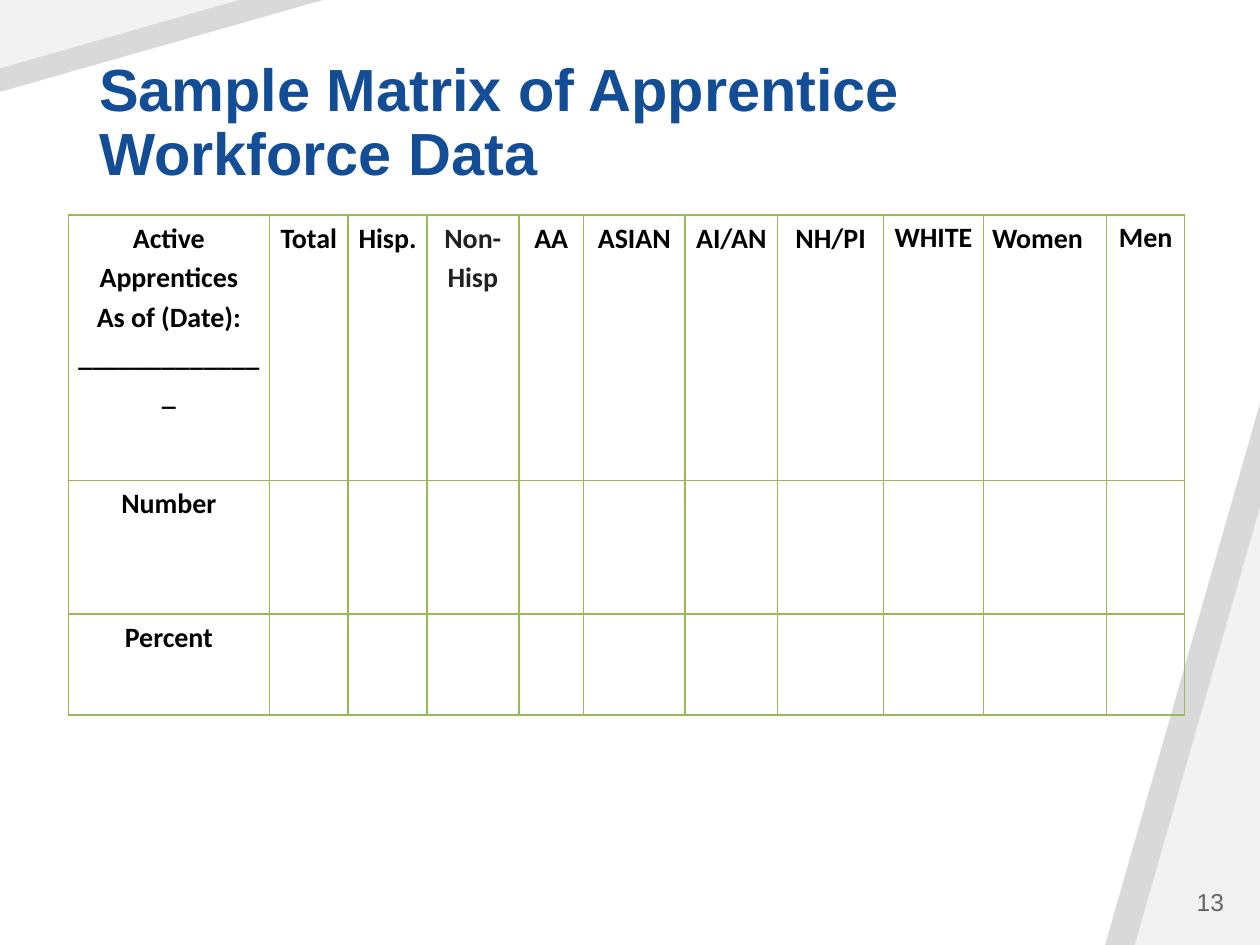
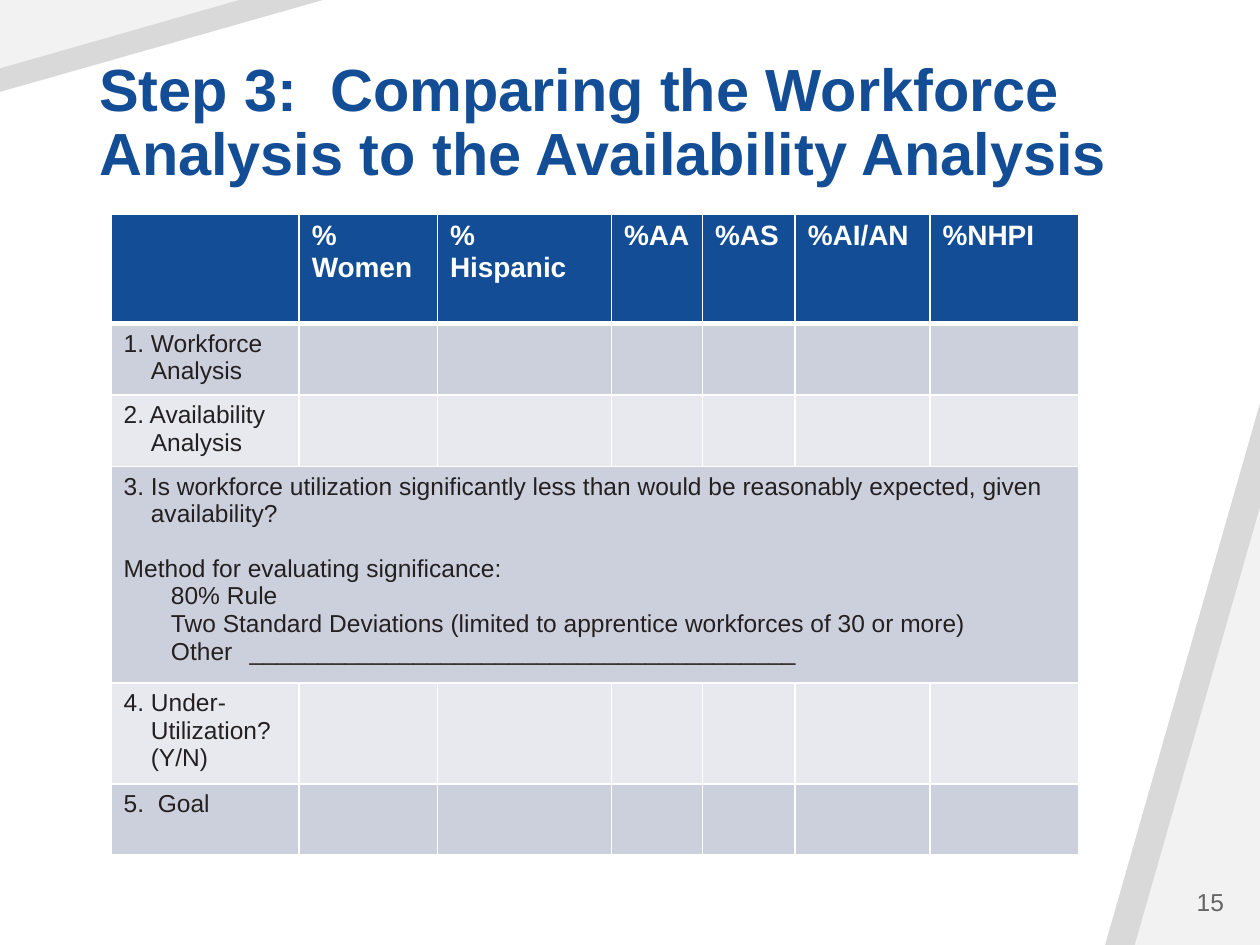
from lxml.etree import SubElement
from pptx import Presentation
from pptx.dml.color import RGBColor
from pptx.enum.shapes import MSO_SHAPE as SHAPE
from pptx.enum.text import MSO_ANCHOR as ANCHOR, MSO_AUTO_SIZE as FIT, PP_ALIGN as ALIGN
from pptx.oxml import parse_xml
from pptx.oxml.ns import nsdecls, qn
from pptx.util import Pt

COLORS = {
    "blue": "124D95", "ink": "242021", "black": "000000", "white": "FFFFFF",
    "gray": "646464", "band": "D9D9D9", "corner": "F2F2F2",
    "green": "98B954", "row_dark": "CCD0DD", "row_light": "E7E9EF",
}
# left, top, width, height, rotation, colour of each right-angled corner band
BANDS = [
    (631.5, 230.5, 88.5, 309.5, 0, "band"),
    (648.5, 290, 71.5, 250, 0, "corner"),
    (0, 0, 184.5, 52.5, 180, "band"),
    (0, 0, 136.5, 39, 180, "corner"),
]


def rgb(name):
    return RGBColor.from_string(COLORS[name])


class Deck:
    def __init__(self):
        self.prs = Presentation()
        self.prs.slide_width, self.prs.slide_height = Pt(720), Pt(540)
        self.s = None

    def slide(self, title, number):
        self.s = self.prs.slides.add_slide(self.prs.slide_layouts[5])
        for band in BANDS:
            self.band(*band)
        self.title(title)
        self.page_number(number)

    def style(self, p, size, color, font="Arial", bold=False):
        for r in p.runs:
            f = r.font
            f.name, f.size, f.bold = font, Pt(size), bold
            f.color.rgb = rgb(color)

    def band(self, x, y, w, h, rotation, color):
        sp = self.s.shapes.add_shape(SHAPE.ISOSCELES_TRIANGLE, Pt(x), Pt(y), Pt(w), Pt(h))
        sp.adjustments[0] = 1
        sp.rotation = rotation
        sp.shadow.inherit = False
        sp.fill.solid()
        sp.fill.fore_color.rgb = rgb(color)
        sp.line.fill.background()

    def title(self, text):
        sp = self.s.shapes.title
        sp.left, sp.top, sp.width, sp.height = Pt(49.5), Pt(29), Pt(626.5), Pt(82.5)
        tf = sp.text_frame
        tf.text = text
        tf.word_wrap, tf.auto_size = True, FIT.NONE
        tf.vertical_anchor = ANCHOR.BOTTOM
        p = tf.paragraphs[0]
        p.alignment, p.line_spacing = ALIGN.LEFT, 0.9
        self.style(p, 34, "blue", bold=True)
        # the title stays in front of the bands
        self.s.shapes._spTree.append(sp._element)

    def page_number(self, number):
        sp = self.s.shapes.add_textbox(Pt(605.5), Pt(500.5), Pt(101), Pt(29))
        tf = sp.text_frame
        tf.text = str(number)
        tf.word_wrap, tf.vertical_anchor = True, ANCHOR.MIDDLE
        p = tf.paragraphs[0]
        p.alignment = ALIGN.RIGHT
        self.style(p, 14, "gray")

    def table(self, x, y, widths, heights):
        frame = self.s.shapes.add_table(len(heights), len(widths), Pt(x), Pt(y),
                                        Pt(sum(widths)), Pt(sum(heights)))
        table = frame.table
        table.first_row = table.horz_banding = False
        for column, width in zip(table.columns, widths):
            column.width = Pt(width)
        for row, height in zip(table.rows, heights):
            row.height = Pt(height)
        return table

    def fill(self, cell, color=None):
        if color:
            cell.fill.solid()
            cell.fill.fore_color.rgb = rgb(color)
        else:
            cell.fill.background()

    def borders(self, cell, color, top=1, bottom=1):
        tcPr = cell._tc.get_or_add_tcPr()
        sides = {"lnL": 1, "lnR": 1, "lnT": top, "lnB": bottom}
        for i, (side, width) in enumerate(sides.items()):
            tcPr.insert(i, parse_xml(
                f'<a:{side} {nsdecls("a")} w="{Pt(width)}"><a:solidFill>'
                f'<a:srgbClr val="{COLORS[color]}"/></a:solidFill></a:{side}>'))

    def margins(self, cell, side, top):
        cell.margin_left = cell.margin_right = Pt(side)
        cell.margin_top, cell.margin_bottom = Pt(top), 0

    def indent(self, p, left, first, tab=None):
        pPr = p._p.get_or_add_pPr()
        pPr.set("marL", str(Pt(left)))
        pPr.set("indent", str(Pt(first)))
        if tab:
            tabs = SubElement(pPr, qn("a:tabLst"))
            SubElement(tabs, qn("a:tab"), pos=str(Pt(tab)), algn="l")


def workforce_matrix(deck):
    deck.slide("Sample Matrix of Apprentice Workforce Data", 13)
    heads = ["Active Apprentices\nAs of (Date): ______________", "Total", "Hisp.",
             "Non- Hisp", "AA", "ASIAN", "AI/AN", "NH/PI", "WHITE", "Women", "Men"]
    rows = [heads, ["Number"], ["Percent"]]
    widths = [115, 45, 45, 52.5, 37, 58, 53, 60.5, 57, 70.5, 44.5]
    table = deck.table(39, 123, widths, [151.5, 76.5, 57.5])
    for cell in table.iter_cells():
        deck.fill(cell)
        deck.borders(cell, "green")
    for i, row in enumerate(rows):
        for j, text in enumerate(row):
            cell = table.cell(i, j)
            cell.text_frame.text = text
            deck.margins(cell, *((0, 0) if text in ("WHITE", "Men") else (5, 0.75)))
            for p in cell.text_frame.paragraphs:
                p.alignment = ALIGN.LEFT if text == "Women" else ALIGN.CENTER
                p.line_spacing = 1.15
                color = "ink" if text == "Non- Hisp" else "black"
                deck.style(p, 16, color, "Calibri", bold=True)


def availability_comparison(deck):
    deck.slide("Step 3:  Comparing the Workforce Analysis to the Availability Analysis", 15)
    heads = ["", "%\vWomen", "%\vHispanic", "%AA", "%AS", "%AI/AN", "%NHPI"]
    steps = [
        "1. Workforce\vAnalysis",
        "2. Availability\vAnalysis",
        "3. Is workforce utilization significantly less than would be reasonably "
        "expected, given\vavailability?\n"
        "Method for evaluating significance:\n"
        "80% Rule\n"
        "Two Standard Deviations (limited to apprentice workforces of 30 or more)\n"
        "Other\t" + "_" * 40,
        "4. Under-\vUtilization?\v(Y/N)",
        "5.  Goal",
    ]
    table = deck.table(63.5, 122.5, [107.5, 79, 99.5, 52, 53, 77, 85],
                       [62.5, 40.5, 40.5, 117, 55, 40.5])
    for i, row in enumerate(table.rows):
        for cell in row.cells:
            deck.fill(cell, "blue" if i == 0 else "row_dark" if i % 2 else "row_light")
            deck.borders(cell, "white", top=3 if i == 1 else 1, bottom=3 if i == 0 else 1)
    table.cell(3, 0).merge(table.cell(3, len(heads) - 1))

    for j, text in enumerate(heads):
        tf = table.cell(0, j).text_frame
        tf.text = text
        deck.style(tf.paragraphs[0], 16, "white", bold=True)
    for i, text in enumerate(steps, 1):
        tf = table.cell(i, 0).text_frame
        tf.text = text
        step, *details = tf.paragraphs
        deck.indent(step, 15.5, -15.5)
        if details:
            method, *options = details
            method.space_before = Pt(15.5)
            for p in options:
                deck.indent(p, 0, 27, tab=97)
        for p in tf.paragraphs:
            deck.style(p, 14, "ink")


def main():
    deck = Deck()
    workforce_matrix(deck)
    availability_comparison(deck)
    deck.prs.save("out.pptx")


if __name__ == "__main__":
    main()
